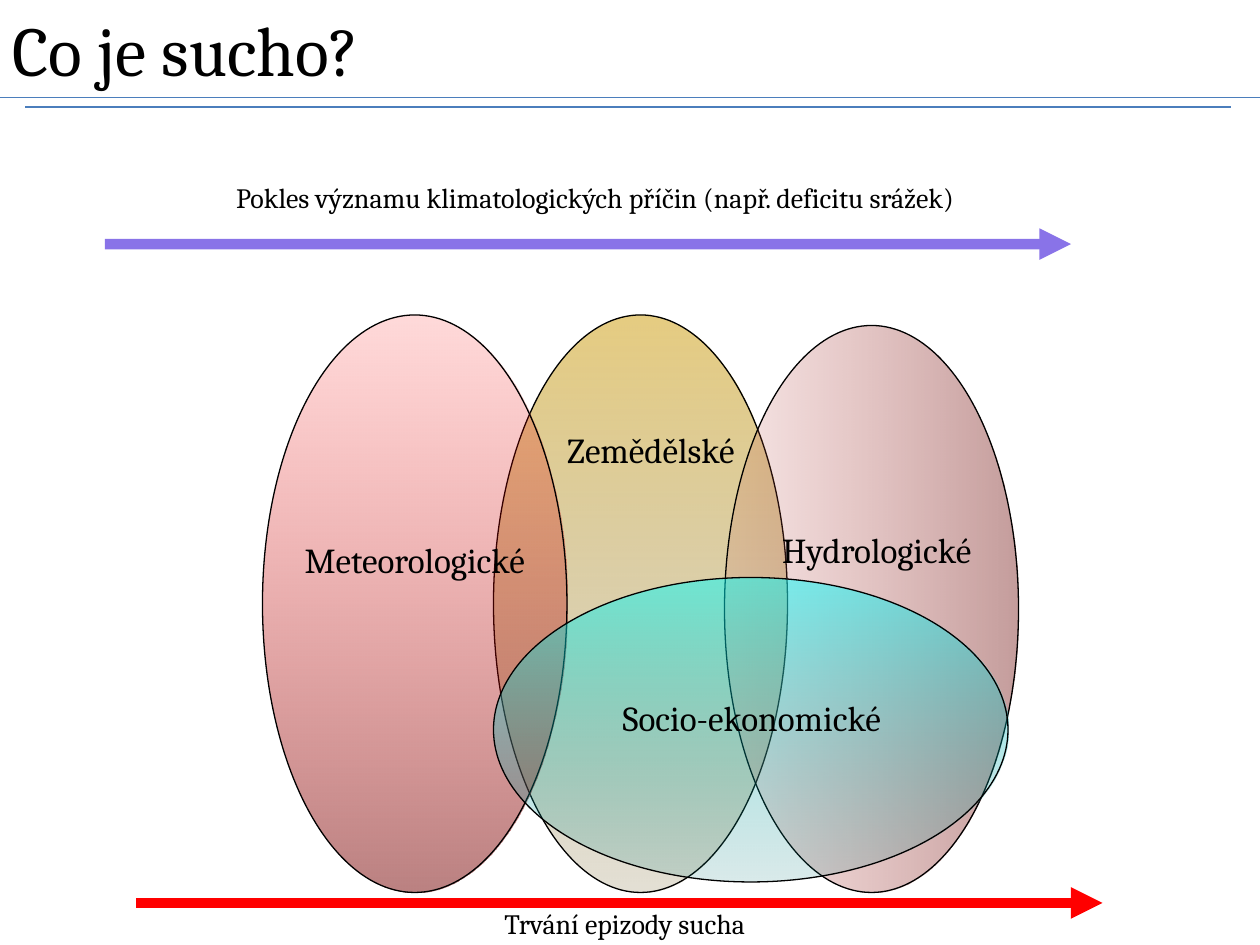
from lxml import etree
from pptx import Presentation
from pptx import util as u
from pptx.dml.color import RGBColor
from pptx.enum import shapes, text
from pptx.oxml.ns import qn

COLORS = {
    "ink": "000000", "rule": "4B7EBC", "decline": "2900D6", "duration": "FF0000",
    "ochre": "CC9900", "brown": "5E4700", "red": "FF0000", "maroon": "760000",
    "brick": "C0504D", "rust": "893937", "cyan": "00FFFF", "teal": "007676",
}
FONT = "Cambria"

deck = Presentation()
deck.slide_width, deck.slide_height = u.Inches(10), u.Inches(7.5)
unit = deck.slide_width / 120
slide = deck.slides.add_slide(deck.slide_layouts[5])


def grid(*cells):
    return [round(cell * unit) for cell in cells]


def write(frame, words, size, align):
    frame.text = words
    frame.word_wrap = True
    frame.vertical_anchor = text.MSO_ANCHOR.TOP
    paragraph = frame.paragraphs[0]
    paragraph.alignment = align
    font = paragraph.runs[0].font
    font.name, font.size = FONT, u.Pt(size)
    font.color.rgb = RGBColor.from_string(COLORS["ink"])
    return paragraph


heading = slide.shapes.title
heading.left, heading.top, heading.width, heading.height = grid(0, 0, 120, 9.25)
write(heading.text_frame, "Co je sucho?", 40, text.PP_ALIGN.LEFT)

droughts = [
    ((47, 30, 28, 55), 0, 270, (("ochre", 50), ("brown", 17))),
    ((25, 30, 29, 55), 0, 270, (("red", 15), ("maroon", 50))),
    ((69, 31, 28, 54), 0, 0, (("brick", 14), ("rust", 50))),
    ((57, 45, 29, 49), 90, 0, (("cyan", 50), ("teal", 15))),
]
for place, turn, angle, shades in droughts:
    oval = slide.shapes.add_shape(shapes.MSO_SHAPE.OVAL, *grid(*place))
    oval.shadow.inherit = False
    oval.rotation = turn
    oval.fill.gradient()
    oval.fill.gradient_angle = angle
    for position, (stop, (shade, opacity)) in enumerate(zip(oval.fill.gradient_stops, shades)):
        stop.position = position
        stop.color.rgb = RGBColor.from_string(COLORS[shade])
    for tint, (shade, opacity) in zip(oval._element.spPr.iter(qn("a:srgbClr")), shades):
        etree.SubElement(tint, qn("a:alpha"), val=str(opacity * 1000))
    oval.line.color.rgb = RGBColor.from_string(COLORS["ink"])
    oval.line.width = u.Pt(0.75)

labels = [
    ("Meteorologické", (25, 51, 29, 5.1), 20),
    ("Zemědělské", (49.5, 40.5, 25, 5.1), 20),
    ("Hydrologické", (71, 50, 25, 5.1), 20),
    ("Socio-ekonomické", (55.6, 66, 32, 5.1), 20),
    ("Pokles významu klimatologických příčin (např. deficitu srážek)", (10.7, 16.8, 92, 4.4), 16),
    ("Trvání epizody sucha", (40, 86, 39, 4.4), 16),
]
for words, place, size in labels:
    label = slide.shapes.add_textbox(*grid(*place))
    write(label.text_frame, words, size, text.PP_ALIGN.CENTER).line_spacing = 0.95

strokes = [
    (10, 102, 23.25, "decline", 6, 55, True),
    (13, 105, 86, "duration", 6, 100, True),
    (0, 120, 9.3, "rule", 0.75, 100, False),
    (2.4, 117.2, 10.2, "rule", 0.75, 100, False),
]
for start, end, row, color, weight, opacity, arrow in strokes:
    stroke = slide.shapes.add_connector(shapes.MSO_CONNECTOR.STRAIGHT, *grid(start, row, end, row))
    stroke.line.color.rgb = RGBColor.from_string(COLORS[color])
    stroke.line.width = u.Pt(weight)
    properties = stroke._element.spPr
    if opacity < 100:
        tint = next(properties.iter(qn("a:srgbClr")))
        etree.SubElement(tint, qn("a:alpha"), val=str(opacity * 1000))
    if arrow:
        etree.SubElement(properties.find(qn("a:ln")), qn("a:tailEnd"), type="triangle")
    etree.SubElement(properties, qn("a:effectLst"))

deck.save("out.pptx")
